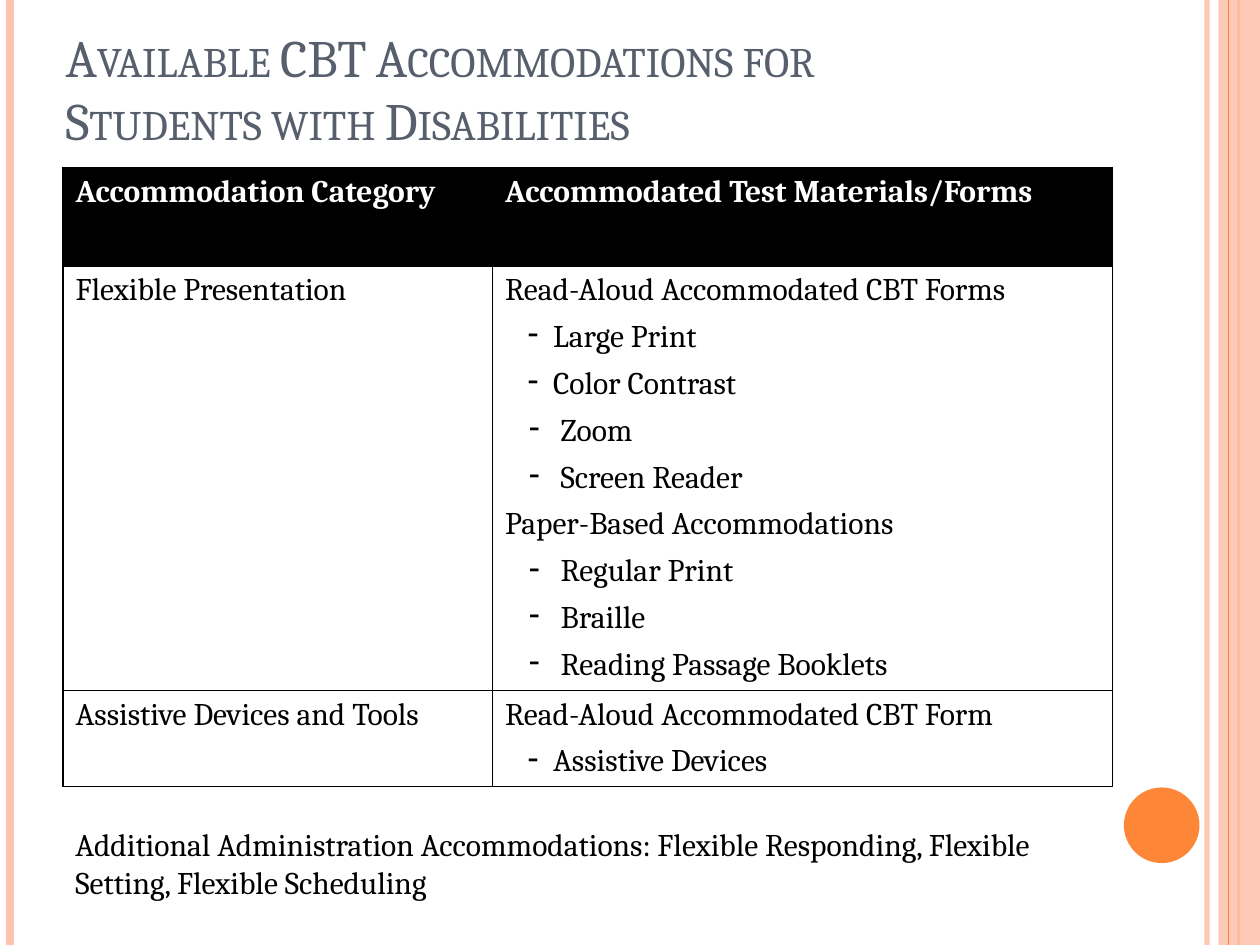
"""Build the slide on CBT accommodations for students with disabilities."""
import lxml.etree
import pptx
import pptx.dml.color
import pptx.enum.shapes
import pptx.enum.text
import pptx.oxml.ns
import pptx.util

Inches, Pt = pptx.util.Inches, pptx.util.Pt
SHAPE = pptx.enum.shapes.MSO_SHAPE
ANCHOR, ALIGN, FIT = pptx.enum.text.MSO_ANCHOR, pptx.enum.text.PP_ALIGN, pptx.enum.text.MSO_AUTO_SIZE

THEME = {
    "font": "Cambria", "title": 30, "body": 18,
    "slate": "575F6D", "black": "000000", "white": "FFFFFF",
    "peach": "FEC3AE", "orange": "FE8637",
}
TITLE = "Available CBT Accommodations for \vStudents with Disabilities"
NOTE = ("Additional Administration Accommodations: Flexible Responding, "
        "Flexible Setting, Flexible Scheduling")
HEAD = ["Accommodation Category", "Accommodated Test Materials/Forms"]
PLAIN, HANG, NEAR, FAR = (0, 0), (0.13, -0.13), (0.38, -0.2), (0.44, -0.25)
ROWS = [
    ("Flexible Presentation", [
        ("Read-Aloud Accommodated CBT Forms", HANG),
        ("Large Print", NEAR), ("Color Contrast", NEAR),
        ("Zoom", FAR), ("Screen Reader", FAR),
        ("Paper-Based Accommodations", HANG),
        ("Regular Print", FAR), ("Braille", FAR), ("Reading Passage Booklets", FAR),
    ]),
    ("Assistive Devices and Tools", [
        ("Read-Aloud Accommodated CBT Form", PLAIN), ("Assistive Devices", NEAR),
    ]),
]
WIDTHS, HEIGHTS = [3.41, 4.92], [0.78, 3.37, 0.76]
BACK_RULES = [(9.58, "peach", 3, 93), (0.08, "peach", 4.5, 100), (9.83, "orange", 1.5, 100)]
FRONT_RULES = [(9.75, "orange", 0.75, 100)]


def tint(name):
    return pptx.dml.color.RGBColor.from_string(THEME[name])


def add_node(parent, tag, **attrs):
    node = lxml.etree.SubElement(parent, pptx.oxml.ns.qn(tag))
    for key, value in attrs.items():
        node.set(key, str(value))
    return node


def fade(shape, percent):
    for color in shape._element.spPr.iter(pptx.oxml.ns.qn("a:srgbClr")):
        add_node(color, "a:alpha", val=percent * 1000)


def put_text(para, text, size="body", color="black", bold=False, caps=False,
             indent=PLAIN, after=0, bullet=False):
    para.text = text
    para.alignment = ALIGN.LEFT
    para.space_after = Pt(after)
    props = para._p.get_or_add_pPr()
    props.set("marL", str(Inches(indent[0])))
    props.set("indent", str(Inches(indent[1])))
    if bullet:
        para.level = 1
        add_node(props, "a:buChar", char="-")
    for run in para.runs:
        run.font.name, run.font.size = THEME["font"], Pt(THEME[size])
        run.font.bold, run.font.color.rgb = bold, tint(color)
        if caps:
            run.font._element.set("cap", "small")


def draw_rules(slide, rules):
    for left, color, width, alpha in rules:
        rule = slide.shapes.add_connector(
            pptx.enum.shapes.MSO_CONNECTOR.STRAIGHT,
            Inches(left), 0, Inches(left), Inches(7.5))
        rule.line.color.rgb, rule.line.width = tint(color), Pt(width)
        add_node(rule._element.spPr, "a:effectLst")
        if alpha < 100:
            fade(rule, alpha)


def draw_shape(slide, kind, box, color):
    shape = slide.shapes.add_shape(kind, *map(Inches, box))
    shape.shadow.inherit = False
    shape.fill.solid()
    shape.fill.fore_color.rgb = tint(color)
    shape.line.fill.background()
    return shape


def style_cell(cell, color):
    props = cell._tc.get_or_add_tcPr()
    for side in ("a:lnL", "a:lnR", "a:lnT", "a:lnB"):
        edge = add_node(props, side, w=Pt(1))
        add_node(add_node(edge, "a:solidFill"), "a:srgbClr", val=THEME["black"])
    cell.fill.solid()
    cell.fill.fore_color.rgb = tint(color)


def draw_table(slide):
    box = map(Inches, (0.5, 1.33, sum(WIDTHS), sum(HEIGHTS)))
    table = slide.shapes.add_table(len(HEIGHTS), len(WIDTHS), *box).table
    for col, width in zip(table.columns, WIDTHS):
        col.width = Inches(width)
    for row, height in zip(table.rows, HEIGHTS):
        row.height = Inches(height)
    for cell, text in zip(table.rows[0].cells, HEAD):
        style_cell(cell, "black")
        put_text(cell.text_frame.paragraphs[0], text, color="white", bold=True)
    for num, (label, items) in enumerate(ROWS, 1):
        left, right = table.rows[num].cells
        style_cell(left, "white")
        style_cell(right, "white")
        put_text(left.text_frame.paragraphs[0], label)
        frame = right.text_frame
        for spot, (text, indent) in enumerate(items):
            para = frame.add_paragraph() if spot else frame.paragraphs[0]
            put_text(para, text, indent=indent, bullet=indent in (NEAR, FAR),
                     after=6 if spot < len(items) - 1 else 0)


def main():
    deck = pptx.Presentation()
    deck.slide_width, deck.slide_height = Inches(10), Inches(7.5)
    slide = deck.slides.add_slide(deck.slide_layouts[5])

    draw_rules(slide, BACK_RULES)
    fade(draw_shape(slide, SHAPE.RECTANGLE, (9.67, 0, 0.33, 7.5), "peach"), 87)
    draw_rules(slide, FRONT_RULES)
    draw_shape(slide, SHAPE.OVAL, (8.92, 6.25, 0.6, 0.6), "orange")

    title = slide.shapes.title
    title.left, title.top, title.width, title.height = map(Inches, (0.42, 0, 8.17, 1.25))
    title.text_frame.vertical_anchor = ANCHOR.BOTTOM
    title.text_frame.auto_size = FIT.NONE
    put_text(title.text_frame.paragraphs[0], TITLE, size="title", color="slate", caps=True)

    draw_table(slide)

    note = slide.shapes.add_textbox(*map(Inches, (0.5, 6.5, 8.25, 0.71))).text_frame
    note.word_wrap, note.auto_size = True, FIT.SHAPE_TO_FIT_TEXT
    put_text(note.paragraphs[0], NOTE)
    deck.save("out.pptx")


if __name__ == "__main__":
    main()
